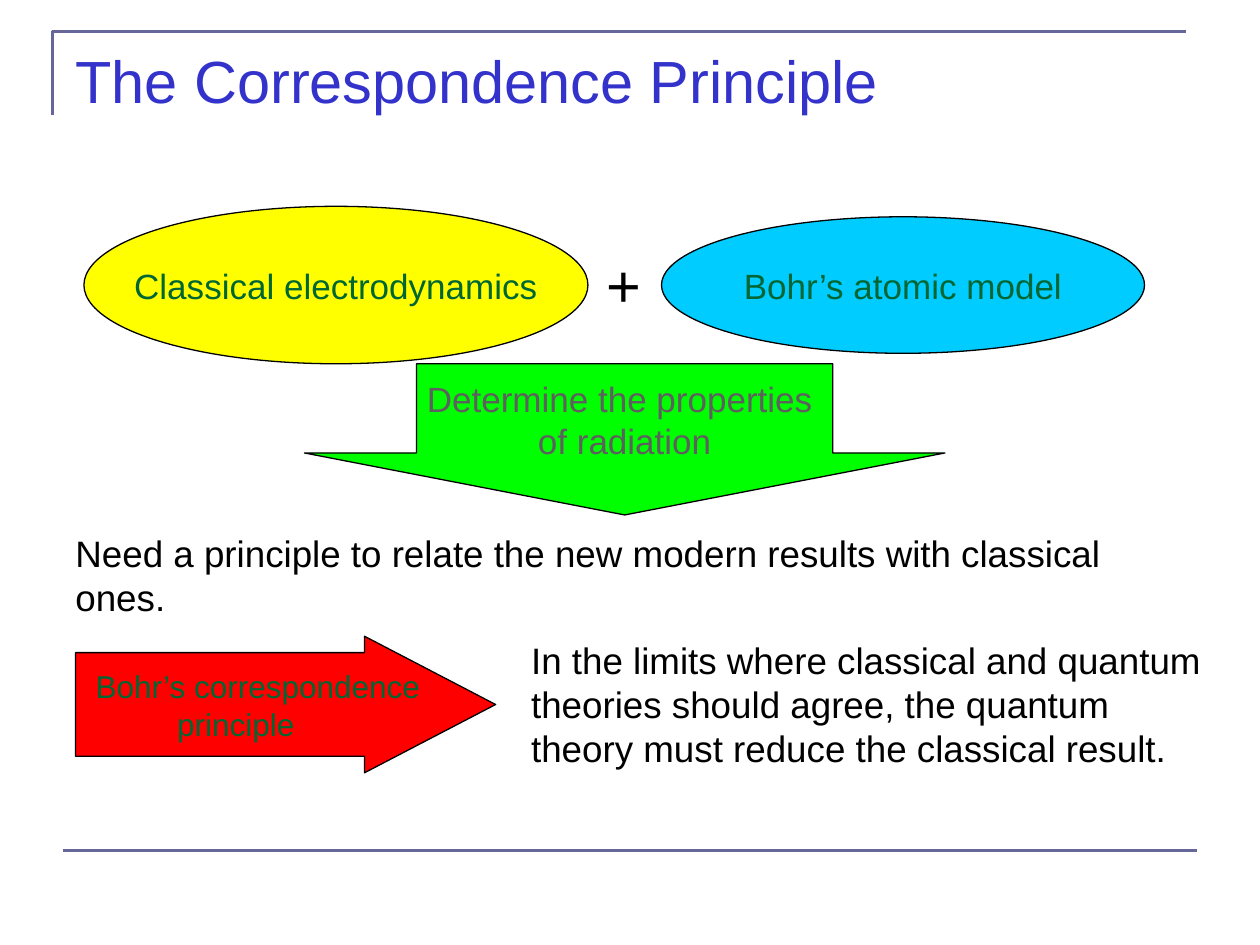
from lxml import etree
from pptx import Presentation
from pptx import util as u
from pptx.dml.color import RGBColor
from pptx.enum import shapes, text
from pptx.oxml.ns import qn

BLACK = RGBColor(0x00, 0x00, 0x00)
TITLE_BLUE = RGBColor(0x33, 0x33, 0xCC)
RULE = RGBColor(0x66, 0x66, 0x99)
YELLOW = RGBColor(0xFF, 0xFF, 0x00)
SKY = RGBColor(0x00, 0xCC, 0xFF)
LIME = RGBColor(0x00, 0xFF, 0x00)
RED = RGBColor(0xFF, 0x00, 0x00)
DARK_GREEN = RGBColor(0x00, 0x66, 0x33)
GREY = RGBColor(0x5F, 0x5F, 0x5F)

COLUMNS, ROWS = 120, 90
CENTER = text.PP_ALIGN.CENTER
LEFT = text.PP_ALIGN.LEFT


def write(frame, words, size=21, color=BLACK, font="Arial", align=LEFT,
          anchor=text.MSO_ANCHOR.TOP, wrap=True, first_indent=0):
    """Fill a text frame, one paragraph per line of words."""
    frame.word_wrap = wrap
    frame.vertical_anchor = anchor
    frame.text = words
    for paragraph in frame.paragraphs:
        paragraph.alignment = align
        paragraph.font.name = font
        paragraph.font.size = u.Pt(size)
        paragraph.font.color.rgb = color
    if first_indent:
        properties = frame.paragraphs[0]._p.get_or_add_pPr()
        properties.set("marL", str(u.Inches(first_indent)))


class Board:
    """The current slide, its grid and its style."""

    def __init__(self, deck):
        self.slide = deck.slides.add_slide(deck.slide_layouts[5])
        self.column = deck.slide_width / COLUMNS
        self.row = deck.slide_height / ROWS

    def place(self, x, y, *size):
        across, down = (size or (0, 0))
        box = (x * self.column, y * self.row,
               across * self.column, down * self.row)
        return [round(v) for v in (box if size else box[:2])]

    def title(self, box, words):
        heading = self.slide.shapes.title
        heading.left, heading.top, heading.width, heading.height = self.place(*box)
        write(heading.text_frame, words, size=34, color=TITLE_BLUE)

    def note(self, box, words, **style):
        write(self.slide.shapes.add_textbox(*self.place(*box)).text_frame,
              words, **style)

    def figure(self, kind, box, fill, words, adjust=(), **style):
        figure = self.slide.shapes.add_shape(kind, *self.place(*box))
        figure.shadow.inherit = False
        for index, value in enumerate(adjust):
            figure.adjustments[index] = value
        figure.fill.solid()
        figure.fill.fore_color.rgb = fill
        self.stroke(figure.line, BLACK, 0.75)
        write(figure.text_frame, words, align=CENTER, wrap=False,
              anchor=text.MSO_ANCHOR.MIDDLE, **style)

    def rule(self, start, end):
        rule = self.slide.shapes.add_connector(
            shapes.MSO_CONNECTOR.STRAIGHT, *self.place(*start), *self.place(*end))
        self.stroke(rule.line, RULE, 1.5)
        etree.SubElement(rule._element.spPr, qn("a:effectLst"))

    def outline(self, start, *points):
        builder = self.slide.shapes.build_freeform(*self.place(*start))
        builder.add_line_segments([self.place(*p) for p in points], close=False)
        outline = builder.convert_to_shape()
        outline.shadow.inherit = False
        outline.fill.background()
        self.stroke(outline.line, RULE, 1.5)

    @staticmethod
    def stroke(line, color, width):
        line.color.rgb = color
        line.width = u.Pt(width)


def main():
    deck = Presentation()
    deck.slide_width, deck.slide_height = u.Inches(10), u.Inches(7.5)
    board = Board(deck)
    kinds = shapes.MSO_SHAPE

    # Frame and title
    board.outline((5, 11), (5, 3), (113, 3))
    board.rule((6, 81), (114, 81))
    board.title((6, 3.6, 110, 15), "The Correspondence Principle")

    # The two theories and what they determine
    board.figure(kinds.OVAL, (8, 19.65, 48, 15), YELLOW,
                 "Classical electrodynamics", size=20, color=DARK_GREEN)
    board.note((56.6, 23, 5.8, 8), "+", size=34, wrap=False)
    board.figure(kinds.OVAL, (63, 20.65, 46, 13), SKY,
                 "Bohr’s atomic model", size=20, color=DARK_GREEN)
    board.figure(kinds.DOWN_ARROW, (29, 34.65, 61, 14.4), LIME,
                 "Determine the properties \nof radiation",
                 adjust=(0.65, 0.41), size=20, color=GREY)

    # The principle that links them
    board.note((6, 50, 108, 12.7),
               "Need a principle to relate the new modern results with classical ones.")
    board.figure(kinds.RIGHT_ARROW, (7.2, 60.6, 40, 13), RED,
                 "Bohr’s correspondence \nprinciple", adjust=(0.76, 0.96),
                 size=18, color=DARK_GREEN, first_indent=0.42)
    board.note((49.4, 60.1, 67.6, 13.8),
               "In the limits where classical and quantum theories should agree, "
               "the quantum theory must reduce the classical result.")

    deck.save("out.pptx")


if __name__ == "__main__":
    main()
